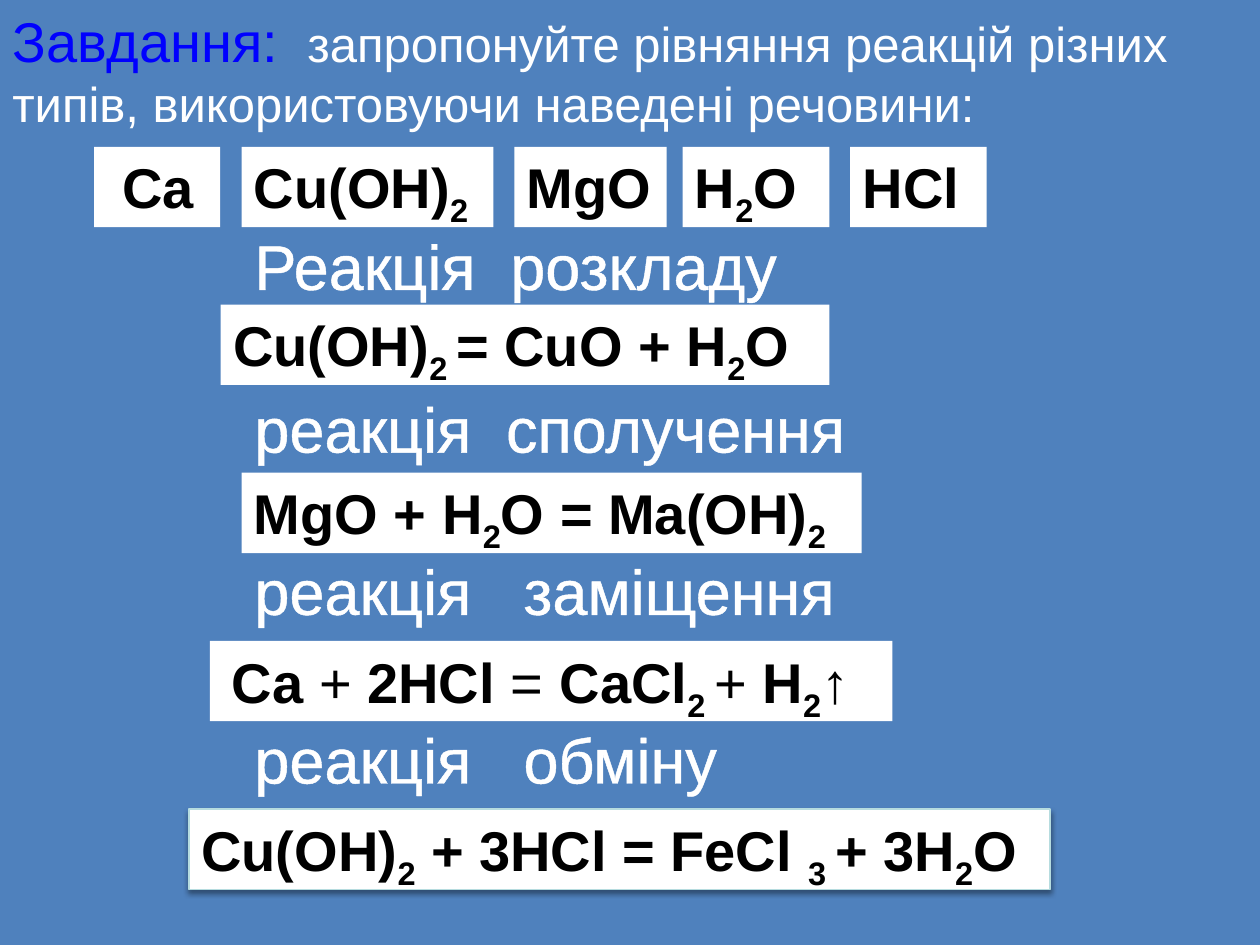
from lxml.etree import SubElement, Element
from pptx import Presentation
from pptx.dml.color import RGBColor
from pptx.enum.shapes import MSO_SHAPE as Form
from pptx.enum.text import MSO_ANCHOR as Anchor, MSO_AUTO_SIZE as Fit, PP_ALIGN as Align
from pptx.oxml.ns import qn
from pptx.util import Cm, Pt

WHITE, BLACK, BLUE = "FFFFFF", "000000", "0000FF"
INSET = 0.25


def paint(fill, color):
    fill.solid()
    fill.fore_color.rgb = RGBColor.from_string(color)


class Board:
    font = "Arial"

    def __init__(self, deck, back):
        self.slide = deck.slides.add_slide(deck.slide_layouts[6])
        paint(self.slide.background.fill, back)

    def setup(self, shape, size, color, bold=False, inset=INSET):
        """Set the text frame and return its first paragraph."""
        frame = shape.text_frame
        frame.word_wrap = True
        frame.auto_size = Fit.SHAPE_TO_FIT_TEXT
        frame.vertical_anchor = Anchor.TOP
        frame.margin_left = Cm(inset)
        para = frame.paragraphs[0]
        para.alignment = Align.LEFT
        para.font.name, para.font.size, para.font.bold = self.font, Pt(size), bold
        paint(para.font.fill, color)
        return para

    def text(self, x, y, w, h, size, color):
        shape = self.slide.shapes.add_textbox(Cm(x), Cm(y), Cm(w), Cm(h))
        return self.setup(shape, size, color)

    def title(self, head, body):
        para = self.text(0, 0, 25.4, 2.82, 28, WHITE)
        lead = para.add_run()
        lead.text = head
        lead.font.size = Pt(32)
        paint(lead.font.fill, BLUE)
        para.add_run().text = body

    def label(self, y, words):
        """Add a heading with outlined letters."""
        run = self.text(4.88, y, 12.9, 1.8, 36, WHITE).add_run()
        run.text = words
        line = Element(qn("a:ln"), w=str(Pt(1.45)))
        fill = SubElement(line, qn("a:solidFill"))
        SubElement(fill, qn("a:srgbClr"), val=WHITE)
        run._r.get_or_add_rPr().insert(0, line)

    def box(self, x, y, w, formula, inset=INSET):
        """Add a formula; its parts split at |, with _ for subscript and ~ for regular."""
        shape = self.slide.shapes.add_shape(Form.RECTANGLE, Cm(x), Cm(y), Cm(w), Cm(1.62))
        shape.shadow.inherit = False
        paint(shape.fill, WHITE)
        shape.line.fill.background()
        para = self.setup(shape, 32, BLACK, True, inset)
        for part in formula.split("|"):
            run = para.add_run()
            run.text = part.lstrip("_~")
            if part[0] == "_":
                run._r.get_or_add_rPr().set("baseline", "-25000")
            elif part[0] == "~":
                run.font.bold = False
        return shape

    def frame(self, shape, color):
        """Give a box a thin line and a soft shadow below."""
        paint(shape.line.fill, color)
        shape.line.width = Pt(0.75)
        glow = SubElement(shape._element.spPr.find(qn("a:effectLst")), qn("a:outerShdw"),
                          blurRad=str(Pt(3.1)), dist=str(Pt(1.6)), dir="5400000", rotWithShape="0")
        tone = SubElement(glow, qn("a:srgbClr"), val=BLACK)
        SubElement(tone, qn("a:alpha"), val="38000")


def main():
    deck = Presentation()
    deck.slide_width, deck.slide_height = Cm(25.4), Cm(19.05)
    board = Board(deck, "4F81BD")
    board.title("Завдання: ", " запропонуйте рівняння реакцій різних типів, "
                "використовуючи наведені речовини:")

    for x, w, formula, inset in [
        (1.9, 2.54, "Ca", 0.57),
        (4.87, 5.08, "Cu(OH)|_2", INSET),
        (10.37, 3.07, "MgO", INSET),
        (13.76, 2.96, "H|_2|O", INSET),
        (17.14, 2.75, "НСl", INSET),
    ]:
        board.box(x, 2.96, w, formula, inset)

    steps = [
        (4.45, "Реакція  розкладу", 4.45, 12.27, "Cu(OH)|_2 |= CuO + H|_2|O", INSET),
        (7.73, "реакція  сполучення", 4.87, 12.5, "MgО + Н|_2|О = Mа(ОН)|_2", INSET),
        (11, "реакція   заміщення", 4.23, 13.76,
         "Са |~+ |2HCl |~= |СаCl|_2 |~+ |Н|_2|↑", 0.43),
        (14.4, "реакція   обміну", 3.81, 17.36,
         "Cu(OН)|_2| + 3HCl = FeCl |_3 |+ 3Н|_2|O", INSET),
    ]
    for i, (y, words, x, w, formula, inset) in enumerate(steps):
        last = board.box(x, 6.14 + 3.39 * i, w, formula, inset)
        board.label(y, words)
    board.frame(last, "B6DCDF")

    deck.save("out.pptx")


if __name__ == "__main__":
    main()
